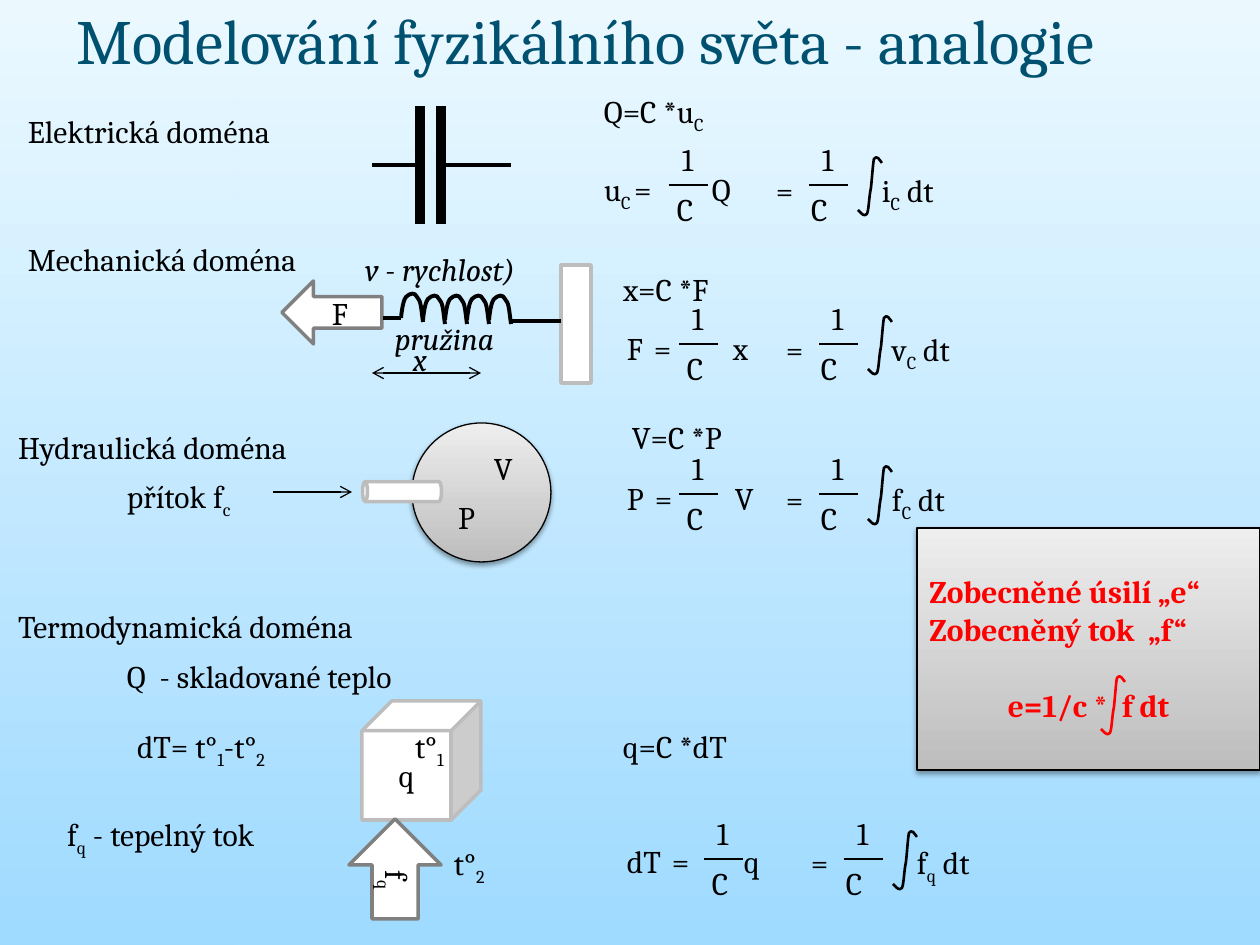
from lxml import etree
from pptx import Presentation
from pptx import util as u
from pptx.dml.color import RGBColor
from pptx.enum import shapes, text
from pptx.oxml import ns

PX = 914400 / 126
THEME = {
    "font": "Cambria", "title_size": 36, "body_size": 18,
    "title": "005070", "ink": "000000", "accent": "FF0000", "white": "FFFFFF",
    "edge": "BDBDBD", "arrow": "808080", "glow": "37B3FF",
    "sky": ("EBF9FF", "9FDAFF"), "metal": ("BDBDBD", "EEEEEE"),
}


def px(*lengths):
    return [u.Emu(round(length * PX)) for length in lengths]


def fill_text(para, marked, color="ink", size="body_size", italic=False, bold=False):
    for index, part in enumerate(marked.split("_")):
        if not part:
            continue
        span = para.add_run()
        span.text = part
        span.font.name = THEME["font"]
        span.font.size = u.Pt(THEME[size])
        span.font.italic = italic
        span.font.bold = bold
        span.font.color.rgb = RGBColor.from_string(THEME[color])
        if index % 2:
            span.font._element.set("baseline", "-25000")


deck = Presentation()
deck.slide_width, deck.slide_height = px(1260, 945)
page = deck.slides.add_slide(deck.slide_layouts[5])

sky = page.background.fill
sky.gradient()
sky.gradient_angle = 270
for stop, color in zip(sky.gradient_stops, THEME["sky"]):
    stop.color.rgb = RGBColor.from_string(color)

title = page.shapes.title
title.left, title.top, title.width, title.height = px(64, -30, 1133, 139)
title.text_frame.auto_size = text.MSO_AUTO_SIZE.NONE
title.text_frame.vertical_anchor = text.MSO_ANCHOR.MIDDLE
title.text_frame.paragraphs[0].alignment = text.PP_ALIGN.LEFT
fill_text(title.text_frame.paragraphs[0], "Modelování fyzikálního světa - analogie",
          "title", "title_size")

kind = shapes.MSO_SHAPE
glow = page.shapes.add_shape(kind.RECTANGLE, *px(0, 0, 233, 945))
glow.shadow.inherit = False
glow.line.fill.background()
glow.fill.gradient()
for stop, color, alpha in zip(glow.fill.gradient_stops, ("glow", "white"), ("37000", "0")):
    stop.color.rgb = RGBColor.from_string(THEME[color])
tints = glow._element.spPr.findall(".//" + ns.qn("a:srgbClr"))
for tint, alpha in zip(tints, ("37000", "0")):
    etree.SubElement(tint, ns.qn("a:alpha"), val=alpha)
linear = glow._element.spPr.find(".//" + ns.qn("a:lin"))
radial = etree.Element(ns.qn("a:path"), {"path": "rect"})
etree.SubElement(radial, ns.qn("a:fillToRect"), r="100000", b="100000")
linear.getparent().replace(linear, radial)
title._element.addprevious(glow._element)

for preset, place, rotation, edge, label in (
    (kind.LEFT_ARROW, (282, 281, 100, 63), 0, "arrow", "F"),
    (kind.RECTANGLE, (561, 265, 30, 118), 0, "edge", ""),
    (kind.OVAL, (412, 423, 139, 139), 0, "ink", ""),
    (kind.CAN, (392, 452, 20, 79), 270, "edge", ""),
    (kind.CUBE, (362, 701, 119, 119), 0, "edge", "q"),
    (kind.LEFT_ARROW, (345, 823, 100, 92), 90, "arrow", "f_q"),
    (kind.RECTANGLE, (917, 528, 343, 242), 0, "ink", ""),
):
    shape = page.shapes.add_shape(preset, *px(*place))
    shape.rotation = rotation
    shape.shadow.inherit = False
    shape.line.color.rgb = RGBColor.from_string(THEME[edge])
    if edge == "ink":
        shape.line.width = u.Pt(0.75)
        shape.fill.gradient()
        shape.fill.gradient_angle = 90
        for stop, color in zip(shape.fill.gradient_stops, THEME["metal"]):
            stop.color.rgb = RGBColor.from_string(color)
        effects = shape._element.spPr.find(ns.qn("a:effectLst"))
        shadow = etree.SubElement(effects, ns.qn("a:outerShdw"), blurRad="39370",
                                  dist="20320", dir="5400000", rotWithShape="0")
        tint = etree.SubElement(shadow, ns.qn("a:srgbClr"), val=THEME["ink"])
        etree.SubElement(tint, ns.qn("a:alpha"), val="38000")
    else:
        shape.line.width = u.Pt(2)
        shape.fill.solid()
        shape.fill.fore_color.rgb = RGBColor.from_string(THEME["white"])
    if label:
        shape.text_frame.vertical_anchor = text.MSO_ANCHOR.MIDDLE
        shape.text_frame.paragraphs[0].alignment = text.PP_ALIGN.CENTER
        fill_text(shape.text_frame.paragraphs[0], label)

panel = shape.text_frame
panel.word_wrap = True
panel.vertical_anchor = text.MSO_ANCHOR.TOP
panel.margin_top = px(44)[0]
panel.text = "\n\n"
for para, line in zip(panel.paragraphs,
                      ("Zobecněné úsilí „e“", "Zobecněný tok  „f“", "e=1/c *  f dt")):
    para.alignment = text.PP_ALIGN.LEFT
    fill_text(para, line, "accent", bold=True)
para.alignment = text.PP_ALIGN.CENTER
para.space_before = u.Pt(21.7)

labels = [(left, top, width, label, False, 13, ()) for left, top, width, label in (
    (15, 106, 290, "Elektrická doména"), (15, 234, 316, "Mechanická doména"),
    (5, 422, 320, "Hydraulická doména"), (5, 601, 394, "Termodynamická doména"),
    (591, 86, 165, "Q=C *u_C"), (610, 264, 145, "x=C *F"),
    (619, 412, 150, "V=C *P"), (610, 721, 165, "q=C *dT"),
    (114, 471, 139, "přítok f_c"), (445, 492, 45, "P"), (481, 443, 47, "V"),
    (114, 651, 336, "Q  - skladované teplo"), (124, 721, 173, "dT= t°_1_-t°_2"),
    (54, 809, 232, "f_q_ - tepelný tok"), (402, 721, 59, "t°_1"), (441, 838, 62, "t°_2"),
)]
labels += [(left, top, width, label, True, 13, ()) for left, top, width, label in (
    (382, 313, 137, "pružina"), (400, 334, 42, "x"), (352, 244, 218, "v - rychlost)"),
)]
lines = [
    (420, 224, 420, 106, 6, ""), (441, 224, 441, 106, 6, ""),
    (420, 165, 372, 165, 2.25, ""), (511, 165, 441, 165, 2.25, ""),
    (383, 318, 401, 318, 2.25, ""), (510, 321, 561, 321, 2.25, ""),
    (372, 373, 481, 373, 0.75, "headEnd tailEnd"), (273, 492, 352, 492, 0.75, "tailEnd"),
]

coil = [(0, 0), (1, -11), (3, -19), (5, -21), (9, -25), (14, -26), (16, -21),
        (20, -17), (20, -11), (22, 4)]
integral = [(24, 8), (21, 4), (19, 0), (16, 4), (15, 9), (14, 24), (13, 33),
            (11, 42), (11, 55), (9, 59), (6, 62), (4, 59), (0, 55)]
curves = [(coil, 401 + 22 * turn, 320 if turn else 318, 2.25, "ink") for turn in range(5)]
curves.append((integral, 1101, 674, 1.5, "accent"))

for x, y, top, left, inset, effort, stops, flow in (
    (669, 185, 164, 591, 13, "u_C_\t=\tQ", (30, 108), "=\ti_C_ dt"),
    (679, 344, 323, 600, 27, "F\t=\tx", (27, 106), "=\tv_C_ dt"),
    (679, 494, 473, 600, 27, "P\t=\tV", (28, 108), "=\tf_C_ dt"),
    (704, 859, 836, 600, 27, "dT\t=\tq", (45, 117), "=\tf_q_ dt"),
):
    labels += [(left, top, 205, effort, False, inset, stops),
               (x + 89, top + 1, 228, flow, False, 18, (106,))]
    for bar_x, under_x in ((x, x - 5), (x + 140, x + 129)):
        labels += [(bar_x, y - 51, 39, "1", False, 13, ()),
                   (under_x, y - 1, 45, "C", False, 13, ())]
        lines.append((bar_x, y, bar_x + 39, y, 1.5, ""))
    curves.append((integral, x + 189, y - 30, 1.5, "ink"))

for x1, y1, x2, y2, weight, heads in lines:
    wire = page.shapes.add_connector(shapes.MSO_CONNECTOR.STRAIGHT, *px(x1, y1, x2, y2))
    wire.line.color.rgb = RGBColor.from_string(THEME["ink"])
    wire.line.width = u.Pt(weight)
    outline = wire._element.spPr.find(ns.qn("a:ln"))
    for head in heads.split():
        etree.SubElement(outline, ns.qn("a:" + head), type="arrow")
    etree.SubElement(wire._element.spPr, ns.qn("a:effectLst"))

for points, left, top, weight, color in curves:
    corners = [px(left + x, top + y) for x, y in points]
    builder = page.shapes.build_freeform(*corners[0])
    builder.add_line_segments(corners[1:], close=False)
    curve = builder.convert_to_shape()
    segments = curve._element.spPr.findall(".//" + ns.qn("a:lnTo"))
    for first in range(0, len(segments), 3):
        bend = etree.Element(ns.qn("a:cubicBezTo"))
        segments[first].addprevious(bend)
        for segment in segments[first:first + 3]:
            bend.append(segment[0])
            segment.getparent().remove(segment)
    curve.shadow.inherit = False
    curve.fill.background()
    curve.line.color.rgb = RGBColor.from_string(THEME[color])
    curve.line.width = u.Pt(weight)

for left, top, width, label, italic, inset, stops in labels:
    box = page.shapes.add_textbox(*px(left, top, width, 50))
    box.text_frame.word_wrap = bool(stops)
    box.text_frame.margin_left = px(inset)[0]
    para = box.text_frame.paragraphs[0]
    fill_text(para, label, italic=italic)
    if stops:
        tabs = etree.SubElement(para._element.get_or_add_pPr(), ns.qn("a:tabLst"))
        for stop in px(*stops):
            etree.SubElement(tabs, ns.qn("a:tab"), pos=str(stop), algn="l")

deck.save("out.pptx")
